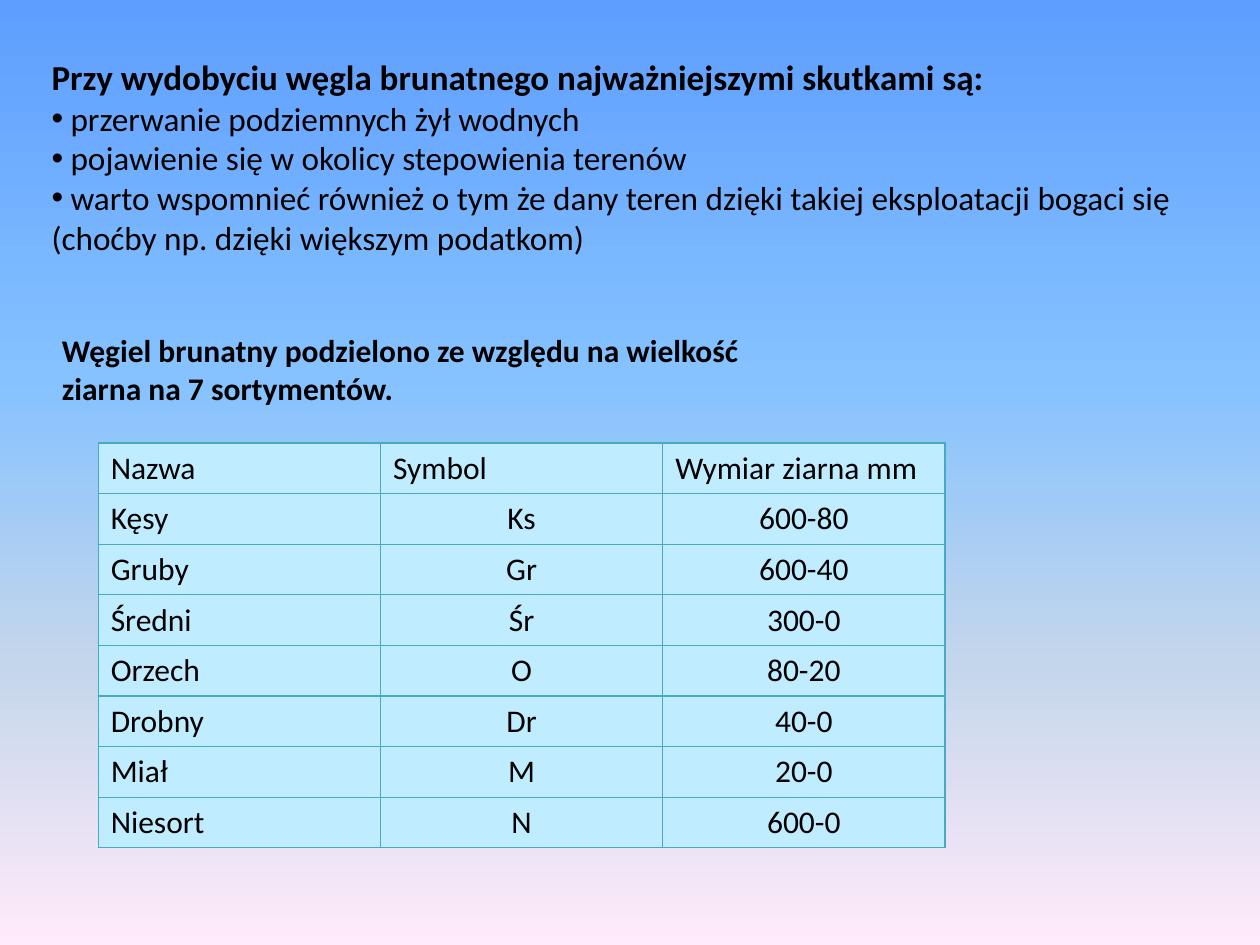
from lxml.etree import SubElement
from pptx import Presentation
from pptx.dml.color import RGBColor
from pptx.enum.text import MSO_ANCHOR, PP_ALIGN
from pptx.oxml.ns import qn
from pptx.util import Cm, Pt

EFFECTS_TITLE = "Przy wydobyciu węgla brunatnego najważniejszymi skutkami są:"
EFFECTS = [
    " przerwanie podziemnych żył wodnych",
    " pojawienie się w okolicy stepowienia terenów",
    " warto wspomnieć również o tym że dany teren dzięki takiej eksploatacji "
    "bogaci się (choćby np. dzięki większym podatkom)",
]
GRADES_TITLE = ("Węgiel brunatny podzielono ze względu na wielkość "
                "ziarna na 7 sortymentów.")
GRADES = [
    ("Nazwa", "Symbol", "Wymiar ziarna mm"),
    ("Kęsy", "Ks", "600-80"),
    ("Gruby", "Gr", "600-40"),
    ("Średni", "Śr", "300-0"),
    ("Orzech", "O", "80-20"),
    ("Drobny", "Dr", "40-0"),
    ("Miał", "M", "20-0"),
    ("Niesort", "N", "600-0"),
]

THEME = {
    "font": "Calibri",
    "text": "000000",
    "cell": "BFECFF",
    "border": "46AAC5",
    "border_width": Pt(0.75),
    "sky": [(0, "5E9EFF"), (40, "85C2FF"), (70, "C4D6EB"), (100, "FFEBFA")],
    "heading": 20,
    "bullet": 19,
    "body": 18,
}
COL_W, ROW_H = Cm(5.69), Cm(1.02)


def paint_background(s):
    fill = s.background.fill
    fill.gradient()
    fill.gradient_angle = 270
    stops = s.element.find(".//" + qn("a:gsLst"))
    for stop in list(stops):
        stops.remove(stop)
    for percent, color in THEME["sky"]:
        stop = SubElement(stops, qn("a:gs"), pos=str(percent * 1000))
        SubElement(stop, qn("a:srgbClr"), val=color)


def write(p, text, size, bold=False):
    p.text = text
    for r in p.runs:
        r.font.name = THEME["font"]
        r.font.size = Pt(size)
        r.font.bold = bold
        r.font.color.rgb = RGBColor.from_string(THEME["text"])


def add_bullet(p):
    pPr = p._p.get_or_add_pPr()
    SubElement(pPr, qn("a:buFont"), typeface="Arial")
    SubElement(pPr, qn("a:buChar"), char="•")


def add_text_box(s, left, top, width, height):
    tf = s.shapes.add_textbox(Cm(left), Cm(top), Cm(width), Cm(height)).text_frame
    tf.word_wrap = True
    return tf


def add_borders(cell):
    tcPr = cell._tc.get_or_add_tcPr()
    for side in ("a:lnL", "a:lnR", "a:lnT", "a:lnB"):
        ln = SubElement(tcPr, qn(side), w=str(THEME["border_width"]))
        SubElement(SubElement(ln, qn("a:solidFill")), qn("a:srgbClr"),
                   val=THEME["border"])


def add_grades_table(s, left, top):
    n_rows, n_cols = len(GRADES), len(GRADES[0])
    table = s.shapes.add_table(n_rows, n_cols, Cm(left), Cm(top),
                               COL_W * n_cols, ROW_H * n_rows).table
    table.first_row = table.horz_banding = False
    for col in table.columns:
        col.width = COL_W
    for i, values in enumerate(GRADES):
        table.rows[i].height = ROW_H
        for j, value in enumerate(values):
            cell = table.cell(i, j)
            add_borders(cell)
            cell.fill.solid()
            cell.fill.fore_color.rgb = RGBColor.from_string(THEME["cell"])
            cell.vertical_anchor = MSO_ANCHOR.MIDDLE
            p = cell.text_frame.paragraphs[0]
            write(p, value, THEME["body"])
            if i and j:
                p.alignment = PP_ALIGN.CENTER


def main():
    prs = Presentation()
    prs.slide_width, prs.slide_height = Cm(25.4), Cm(19.05)
    s = prs.slides.add_slide(prs.slide_layouts[6])
    paint_background(s)

    tf = add_text_box(s, 0.79, 1, 23.42, 4.52)
    write(tf.paragraphs[0], EFFECTS_TITLE, THEME["heading"], bold=True)
    for effect in EFFECTS:
        p = tf.add_paragraph()
        write(p, effect, THEME["bullet"])
        add_bullet(p)

    tf = add_text_box(s, 1, 6.55, 14.88, 1.8)
    write(tf.paragraphs[0], GRADES_TITLE, THEME["body"], bold=True)

    add_grades_table(s, 1.98, 8.93)
    prs.save("out.pptx")


if __name__ == "__main__":
    main()
